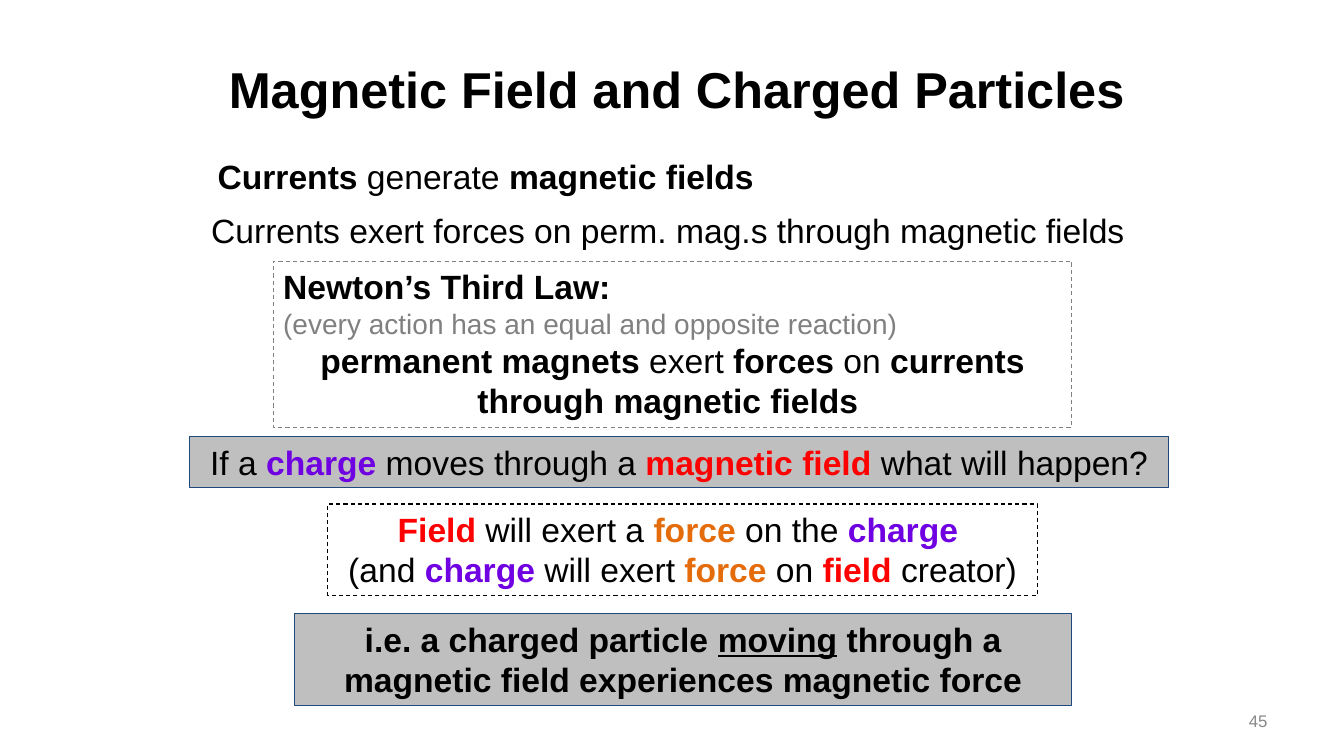
import pptx
import pptx.util
from dataclasses import dataclass
from pptx.dml.color import RGBColor
from pptx.enum.dml import MSO_LINE
from pptx.enum.shapes import MSO_SHAPE
from pptx.enum.text import MSO_ANCHOR, PP_ALIGN
from pptx.util import Inches


@dataclass(frozen=True)
class Theme:
    font: str = "Arial"
    title_size: int = 36
    body_size: int = 24
    note_size: int = 20
    number_size: int = 12
    black: str = "000000"
    field: str = "FF0000"
    force: str = "E46C0A"
    charge: str = "6F00E1"
    note: str = "808080"
    number: str = "898989"
    panel: str = "BFBFBF"
    panel_line: str = "1F497D"


theme = Theme()
LEFT, CENTER, RIGHT = PP_ALIGN.LEFT, PP_ALIGN.CENTER, PP_ALIGN.RIGHT

# Run styles: colour, size, bold, underline
plain = (theme.black, theme.body_size, False, False)
bold = (theme.black, theme.body_size, True, False)
underlined = (theme.black, theme.body_size, True, True)
field = (theme.field, theme.body_size, True, False)
force = (theme.force, theme.body_size, True, False)
charge = (theme.charge, theme.body_size, True, False)
note = (theme.note, theme.note_size, False, False)
title_style = (theme.black, theme.title_size, True, False)
number_style = (theme.number, theme.number_size, False, False)


def write_paragraphs(shape, paragraphs, anchor=MSO_ANCHOR.TOP):
    """Fill a shape with (alignment, [(text, style), ...]) paragraphs."""
    frame = shape.text_frame
    frame.word_wrap = True
    frame.vertical_anchor = anchor
    for index, (alignment, runs) in enumerate(paragraphs):
        paragraph = frame.add_paragraph() if index else frame.paragraphs[0]
        paragraph.alignment = alignment
        for text, (color, size, is_bold, is_underlined) in runs:
            run = paragraph.add_run()
            run.text = text
            run.font.name = theme.font
            run.font.size = pptx.util.Pt(size)
            run.font.bold = is_bold
            run.font.underline = is_underlined
            run.font.color.rgb = RGBColor.from_string(color)


presentation = pptx.Presentation()
presentation.slide_width = Inches(13.33)
presentation.slide_height = Inches(7.5)
slide = presentation.slides.add_slide(presentation.slide_layouts[5])

title = slide.shapes.title
title.left, title.top = Inches(1.93), Inches(0.25)
title.width, title.height = Inches(9.57), Inches(1.25)
write_paragraphs(
    title,
    [(CENTER, [("Magnetic Field and Charged Particles", title_style)])],
    MSO_ANCHOR.MIDDLE,
)

# Plain statements and the slide number: bounds, anchor, paragraph
statements = [
    ((2.06, 1.5, 8.58, 0.51), MSO_ANCHOR.TOP,
     (LEFT, [("Currents", bold), (" generate ", plain), ("magnetic fields", bold)])),
    ((1.67, 2.03, 10, 0.51), MSO_ANCHOR.TOP,
     (CENTER, [("Currents exert forces on perm. mag.s through magnetic fields ", plain)])),
    ((9.56, 6.95, 3.11, 0.4), MSO_ANCHOR.MIDDLE,
     (RIGHT, [("45", number_style)])),
]
for bounds, anchor, paragraph in statements:
    text_box = slide.shapes.add_textbox(*map(Inches, bounds))
    write_paragraphs(text_box, [paragraph], anchor)

# Boxes from top to bottom: bounds, fill, line colour, paragraphs.
# A box without a fill has a dashed outline.
boxes = [
    ((2.71, 2.59, 7.92, 1.65), None, theme.note, [
        (LEFT, [("Newton’s Third Law:", bold)]),
        (LEFT, [("(every action has an equal and opposite reaction)", note)]),
        (CENTER, [("permanent magnets ", bold), ("exert ", plain), ("forces", bold),
                  (" on ", plain), ("currents through magnetic fields ", bold)]),
    ]),
    ((1.88, 4.33, 9.71, 0.51), theme.panel, theme.panel_line, [
        (CENTER, [("If a ", plain), ("charge", charge), (" moves through a ", plain),
                  ("magnetic field ", field), ("what will happen?", plain)]),
    ]),
    ((3.25, 5, 7.04, 0.91), None, theme.black, [
        (CENTER, [("Field", field), (" will exert a ", plain), ("force", force),
                  (" on the ", plain), ("charge ", charge)]),
        (CENTER, [("(and ", plain), ("charge", charge), (" will exert ", plain),
                  ("force", force), (" on ", plain), ("field", field),
                  (" creator)", plain)]),
    ]),
    ((2.92, 6.09, 7.71, 0.91), theme.panel, theme.panel_line, [
        (CENTER, [("i.e. a charged particle ", bold), ("moving", underlined),
                  (" through a magnetic field experiences magnetic force", bold)]),
    ]),
]
for bounds, fill, line_color, paragraphs in boxes:
    box = slide.shapes.add_shape(MSO_SHAPE.RECTANGLE, *map(Inches, bounds))
    box.shadow.inherit = False
    box.line.color.rgb = RGBColor.from_string(line_color)
    box.line.width = pptx.util.Pt(0.75)
    if fill:
        box.fill.solid()
        box.fill.fore_color.rgb = RGBColor.from_string(fill)
    else:
        box.fill.background()
        box.line.dash_style = MSO_LINE.DASH
    write_paragraphs(box, paragraphs)

presentation.save("out.pptx")
